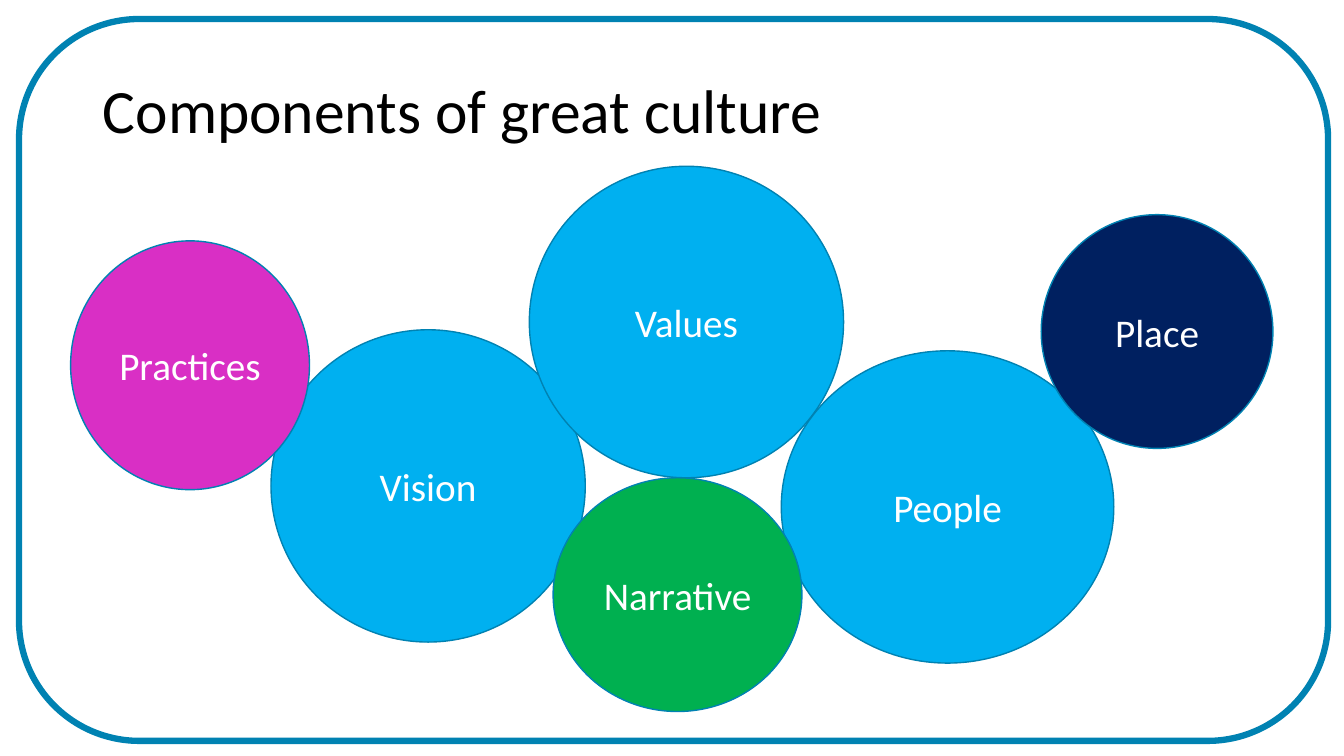
from pptx import Presentation
from pptx import util as u
from pptx.dml.color import RGBColor
from pptx.enum import shapes, text

TEAL = RGBColor(0x00, 0x82, 0xB2)
SKY = RGBColor(0x00, 0xB0, 0xF0)
MAGENTA = RGBColor(0xD9, 0x2F, 0xC5)
GREEN = RGBColor(0x00, 0xB0, 0x50)
NAVY = RGBColor(0x00, 0x20, 0x60)
WHITE = RGBColor(0xFF, 0xFF, 0xFF)
BLACK = RGBColor(0x00, 0x00, 0x00)
FONT = "Calibri"

# Label, fill, then left, top, width, height in cm, from back to front
COMPONENTS = [
    ("Vision", SKY, (6.83, 8.31, 7.92, 7.87)),
    ("Values", SKY, (13.34, 4.19, 7.92, 7.85)),
    ("People", SKY, (19.69, 8.84, 8.38, 7.87)),
    ("Practices", MAGENTA, (1.78, 6.07, 6.02, 6.27)),
    ("Narrative", GREEN, (13.94, 12.04, 6.27, 5.89)),
    ("Place", NAVY, (26.24, 5.41, 5.84, 5.89)),
]


def in_cm(place):
    return [u.Cm(length) for length in place]


def write(box, words, size, color, align):
    """Fill a box with one vertically centred line."""
    frame = box.text_frame
    frame.word_wrap = True
    frame.vertical_anchor = text.MSO_ANCHOR.MIDDLE
    para = frame.paragraphs[0]
    para.alignment = align
    span = para.add_run()
    span.text = words
    span.font.name = FONT
    span.font.size = u.Pt(size)
    span.font.color.rgb = color
    return para


def add_outlined(page, kind, place, line_width, fill=None):
    shape = page.shapes.add_shape(kind, *in_cm(place))
    shape.shadow.inherit = False
    shape.line.color.rgb = TEAL
    shape.line.width = u.Pt(line_width)
    if fill is None:
        shape.fill.background()
    else:
        shape.fill.solid()
        shape.fill.fore_color.rgb = fill
    return shape


def add_title(page, words, place):
    box = page.shapes.add_textbox(*in_cm(place))
    para = write(box, words, 44, BLACK, text.PP_ALIGN.LEFT)
    para.line_spacing = 0.9


def add_component(page, label, fill, place):
    circle = add_outlined(page, shapes.MSO_SHAPE.OVAL, place, 1, fill)
    write(circle, label, 28, WHITE, text.PP_ALIGN.CENTER)


def main():
    deck = Presentation()
    deck.slide_width, deck.slide_height = u.Cm(33.87), u.Cm(19.05)
    page = deck.slides.add_slide(deck.slide_layouts[6])

    # Frame and title
    add_outlined(page, shapes.MSO_SHAPE.ROUNDED_RECTANGLE,
                 (0.48, 0.48, 32.99, 18.19), 4.5)
    add_title(page, "Components of great culture", (2.34, 1.02, 29.21, 3.68))

    # Overlapping circles
    for label, fill, place in COMPONENTS:
        add_component(page, label, fill, place)

    deck.save("out.pptx")


if __name__ == "__main__":
    main()
